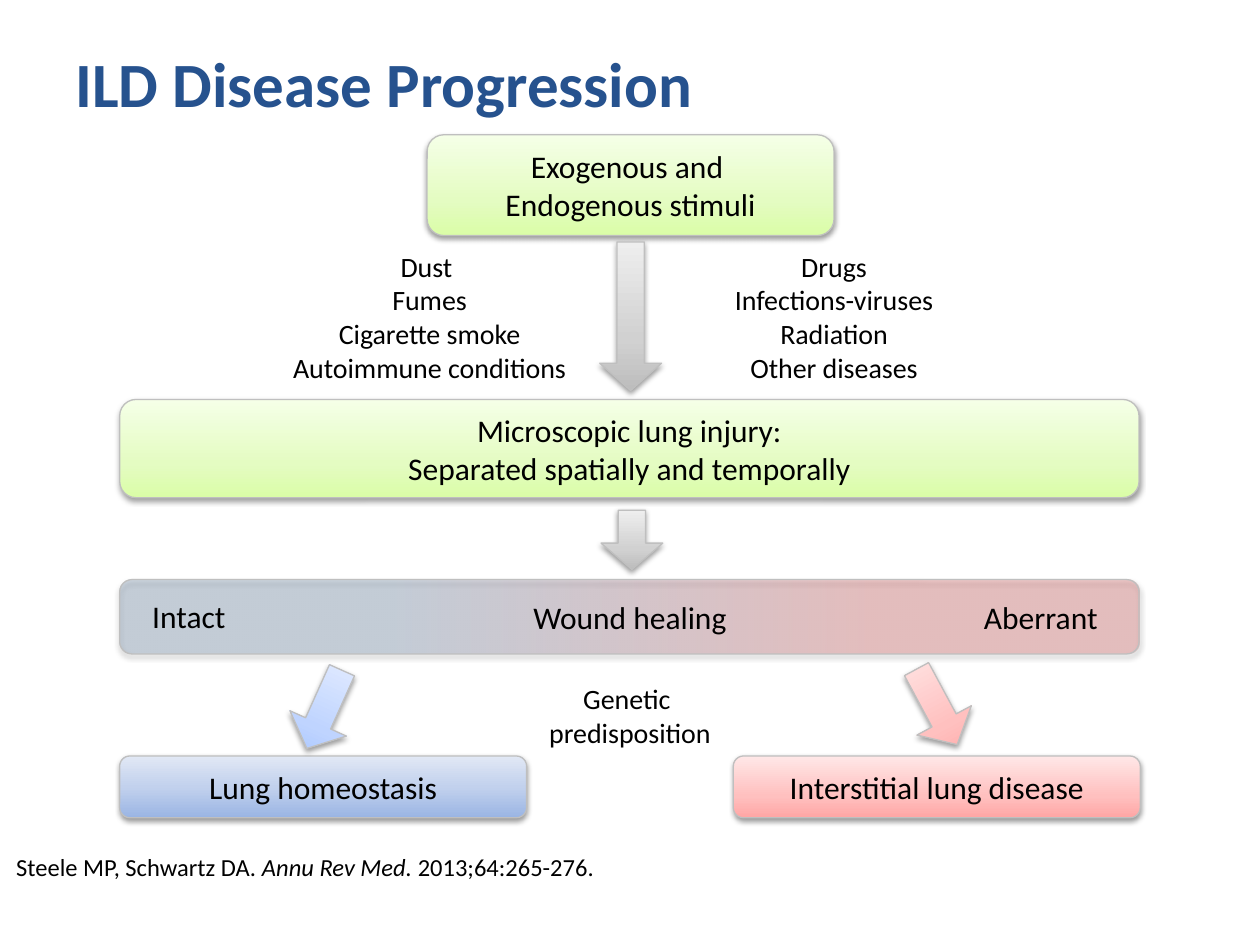
import pptx
import pptx.dml.color
import pptx.enum.shapes
import pptx.enum.text
import pptx.oxml
import pptx.oxml.ns
import pptx.util
from pptx.util import Inches

RGB = pptx.dml.color.RGBColor
SHAPE = pptx.enum.shapes.MSO_SHAPE
ALIGN = pptx.enum.text.PP_ALIGN
ANCHOR = pptx.enum.text.MSO_ANCHOR
qn = pptx.oxml.ns.qn

BLACK = RGB(0x00, 0x00, 0x00)
TITLE_BLUE = RGB(0x26, 0x52, 0x8E)
BORDER = RGB(0xBF, 0xBF, 0xBF)
WOUND_RED = RGB(0xC0, 0x00, 0x00)
WOUND_BLUE = RGB(0x1F, 0x49, 0x7D)

# Gradient stops: (position in percent, colour), from the bottom up
GREEN = [(0, RGB(0xDA, 0xFD, 0xA7)), (35, RGB(0xE4, 0xFC, 0xC2)), (100, RGB(0xF5, 0xFF, 0xE7))]
BLUE = [(0, RGB(0x9A, 0xB5, 0xE4)), (50, RGB(0xC2, 0xD1, 0xED)), (100, RGB(0xE1, 0xE8, 0xF5))]
RED = [(0, RGB(0xFF, 0xA6, 0xA5)), (35, RGB(0xFF, 0xC0, 0xBF)), (100, RGB(0xFF, 0xE7, 0xE7))]
GRAY = [(0, RGB(0xBD, 0xBD, 0xBD)), (35, RGB(0xD1, 0xD1, 0xD1)), (100, RGB(0xEE, 0xEE, 0xEE))]
SKY = [(0, RGB(0xA4, 0xC4, 0xFF)), (35, RGB(0xBF, 0xD4, 0xFF)), (100, RGB(0xE6, 0xEE, 0xFF))]
WOUND = [(26, WOUND_RED), (73, WOUND_BLUE)]

prs = pptx.Presentation()
prs.slide_width, prs.slide_height = Inches(10), Inches(7.5)
s = prs.slides.add_slide(prs.slide_layouts[6])
NS = pptx.oxml.ns.nsdecls("a")


def add_gradient_shape(kind, box, stops, angle=270, opacity=100, shadow=38):
    """Add a bordered shape with a gradient fill and a soft shadow below."""
    sp = s.shapes.add_shape(kind, *map(Inches, box))
    sp.line.color.rgb = BORDER
    sp.line.width = pptx.util.Pt(0.75)
    sp.fill.gradient()
    grad = sp._element.spPr.find(qn("a:gradFill"))
    grad.find(qn("a:lin")).set("ang", str(angle * 60000))
    gs_list = grad.find(qn("a:gsLst"))
    gs_list.clear()
    for pos, color in stops:
        gs_list.append(pptx.oxml.parse_xml(
            f'<a:gs {NS} pos="{pos * 1000}"><a:srgbClr val="{color}">'
            f'<a:alpha val="{opacity * 1000}"/></a:srgbClr></a:gs>'))
    sp.shadow.inherit = False
    sp._element.spPr.find(qn("a:effectLst")).append(pptx.oxml.parse_xml(
        f'<a:outerShdw {NS} blurRad="40000" dist="20000" dir="5400000" rotWithShape="0">'
        f'<a:srgbClr val="000000"><a:alpha val="{shadow * 1000}"/></a:srgbClr></a:outerShdw>'))
    return sp


def write(sp, lines, size, align=ALIGN.CENTER, color=BLACK, bold=False):
    """Fill a shape with one paragraph per line."""
    tf = sp.text_frame
    tf.word_wrap = True
    for i, line in enumerate(lines):
        p = tf.paragraphs[0] if i == 0 else tf.add_paragraph()
        p.text = line
        p.alignment = align
        p.font.name = "Calibri"
        p.font.size = pptx.util.Pt(size)
        p.font.bold = bold
        p.font.color.rgb = color


# Title
sp = s.shapes.add_textbox(Inches(0.5), Inches(0.3), Inches(9), Inches(1.25))
write(sp, ["ILD Disease Progression"], 36, ALIGN.LEFT, TITLE_BLUE, True)

# Stage boxes
for box, stops, lines in [
    ((3.39, 1.07, 3.23, 0.8), GREEN, ["Exogenous and ", "Endogenous stimuli"]),
    ((0.95, 3.17, 8.09, 0.78), GREEN,
     ["Microscopic lung injury:", "Separated spatially and temporally"]),
    ((0.95, 6, 3.23, 0.49), BLUE, ["Lung homeostasis"]),
    ((5.82, 6, 3.23, 0.49), RED, ["Interstitial lung disease"]),
]:
    sp = add_gradient_shape(SHAPE.ROUNDED_RECTANGLE, box, stops)
    sp.text_frame.vertical_anchor = ANCHOR.MIDDLE
    write(sp, lines, 18)

# Wound healing spectrum
add_gradient_shape(SHAPE.ROUNDED_RECTANGLE, (0.95, 4.6, 8.09, 0.59), WOUND,
                   angle=180, opacity=20, shadow=35)

# Labels
for left, top, height, size, align, lines in [
    (1.76, 1.93, 1.18, 16, ALIGN.CENTER,
     ["Dust ", "Fumes", "Cigarette smoke", "Autoimmune conditions"]),
    (4.97, 1.93, 1.18, 16, ALIGN.CENTER,
     ["Drugs", "Infections-viruses", "Radiation", "Other diseases"]),
    (3.35, 5.36, 0.64, 16, ALIGN.CENTER, ["Genetic ", "predisposition"]),
    (1.11, 4.69, 0.4, 18, ALIGN.LEFT, ["Intact"]),
    (3.35, 4.7, 0.4, 18, ALIGN.CENTER, ["Wound healing"]),
    (5.51, 4.7, 0.4, 18, ALIGN.RIGHT, ["Aberrant"]),
]:
    sp = s.shapes.add_textbox(Inches(left), Inches(top), Inches(3.3), Inches(height))
    write(sp, lines, size, align)

# Block arrows between the stages
for left, top, height, rotation, stops in [
    (4.76, 1.92, 1.18, 0, GRAY),
    (4.77, 4.05, 0.47, 0, GRAY),
    (2.33, 5.29, 0.68, 24.2, SKY),
    (7.19, 5.27, 0.68, 331.7, RED),
]:
    sp = add_gradient_shape(SHAPE.DOWN_ARROW, (left, top, 0.49, height), stops)
    sp.adjustments[0] = sp.adjustments[1] = 0.444
    sp.rotation = rotation

# Citation
sp = s.shapes.add_textbox(Inches(0.03), Inches(6.71), Inches(4.83), Inches(0.34))
tf = sp.text_frame
tf.word_wrap = False
p = tf.paragraphs[0]
p.font.name = "Calibri"
p.font.size = pptx.util.Pt(14)
p.font.color.rgb = BLACK
for text, italic in [("Steele MP, Schwartz DA. ", False), ("Annu Rev Med. ", True),
                     ("2013;64:265-276.", False)]:
    r = p.add_run()
    r.text = text
    r.font.italic = italic

prs.save("out.pptx")
